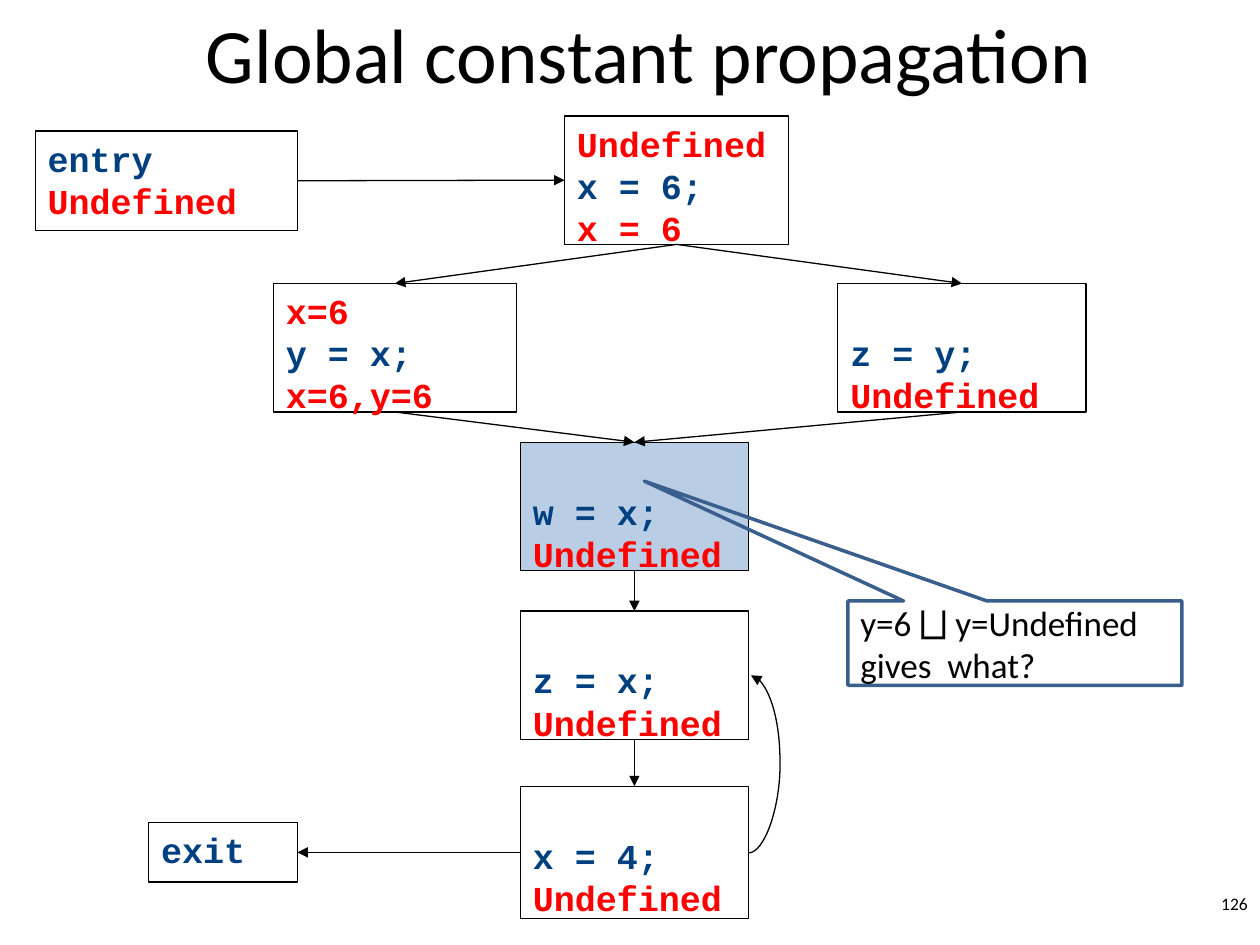
from lxml import etree
from pptx import Presentation
from pptx.dml.color import RGBColor
from pptx.enum.shapes import MSO_CONNECTOR, MSO_SHAPE
from pptx.enum.text import MSO_ANCHOR, PP_ALIGN
from pptx.oxml.ns import qn
from pptx.util import Inches, Pt

BLACK = RGBColor(0x00, 0x00, 0x00)
CODE_BLUE = RGBColor(0x00, 0x40, 0x80)
STATE_RED = RGBColor(0xFF, 0x00, 0x00)
CURRENT_FILL = RGBColor(0xB9, 0xCD, 0xE5)
CALLOUT_LINE = RGBColor(0x3A, 0x5F, 0x8C)
TOP, LEFT, BOTTOM, RIGHT = range(4)


def format_font(paragraph, name, size, color, bold=False):
    for run in paragraph.runs:
        run.font.name = name
        run.font.size = Pt(size)
        run.font.color.rgb = color
        run.font.bold = bold


def add_arrow(kind, x1, y1, x2, y2):
    arrow = slide.shapes.add_connector(kind, Inches(x1), Inches(y1), Inches(x2), Inches(y2))
    arrow.line.color.rgb = BLACK
    arrow.line.width = Pt(0.75)
    line = arrow.line._get_or_add_ln()
    etree.SubElement(line, qn("a:tailEnd"), type="triangle", w="med", len="med")
    etree.SubElement(arrow._element.spPr, qn("a:effectLst"))
    return arrow


presentation = Presentation()
presentation.slide_width = Inches(10)
presentation.slide_height = Inches(7.5)
slide = presentation.slides.add_slide(presentation.slide_layouts[5])

title = slide.shapes.title
title.left, title.top, title.width, title.height = (
    Inches(0.9), Inches(-0.21), Inches(8.5), Inches(1.25))
title.text_frame.text = "Global constant propagation"
title.text_frame.vertical_anchor = MSO_ANCHOR.MIDDLE
title.text_frame.paragraphs[0].alignment = PP_ALIGN.CENTER
format_font(title.text_frame.paragraphs[0], "Calibri", 44, BLACK)

number = slide.shapes.add_textbox(Inches(7.92), Inches(7.04), Inches(2.08), Inches(0.3))
number.text_frame.word_wrap = True
number.text_frame.text = "126"
number.text_frame.paragraphs[0].alignment = PP_ALIGN.RIGHT
format_font(number.text_frame.paragraphs[0], "Calibri", 10, BLACK)

# name: left, top, width, height, state before, code, state after
blocks = {
    "exit": (1.18, 6.53, 1.18, 0.47, None, "exit", None),
    "x = 4": (4.13, 6.24, 1.81, 1.05, "", "x = 4;", "Undefined"),
    "z = x": (4.13, 4.85, 1.81, 1.02, "", "z = x;", "Undefined"),
    "w = x": (4.13, 3.51, 1.81, 1.02, "", "w = x;", "Undefined"),
    "y = x": (2.17, 2.25, 1.93, 1.02, "x=6", "y = x;", "x=6,y=6"),
    "z = y": (6.65, 2.25, 1.97, 1.02, "", "z = y;", "Undefined"),
    "x = 6": (4.48, 0.92, 1.78, 1.02, "Undefined", "x = 6;", "x = 6"),
    "entry": (0.28, 1.04, 2.08, 0.79, None, "entry", "Undefined"),
}
boxes = {}
for name, (left, top, width, height, before, code, after) in blocks.items():
    box = slide.shapes.add_shape(
        MSO_SHAPE.RECTANGLE, Inches(left), Inches(top), Inches(width), Inches(height))
    box.shadow.inherit = False
    box.fill.background()
    box.line.color.rgb = BLACK
    box.line.width = Pt(0.75)
    text_frame = box.text_frame
    text_frame.word_wrap = True
    text_frame.vertical_anchor = MSO_ANCHOR.TOP
    text_frame.margin_top = Inches(0.38 if before == "" else 0.05)
    text_frame.margin_bottom = 0
    lines = [(text, color) for text, color in
             ((before, STATE_RED), (code, CODE_BLUE), (after, STATE_RED)) if text]
    text_frame.text = "\n".join(text for text, color in lines)
    for paragraph, (text, color) in zip(text_frame.paragraphs, lines):
        paragraph.alignment = PP_ALIGN.LEFT
        paragraph.line_spacing = Pt(24)
        format_font(paragraph, "Courier New", 20, color, bold=True)
    boxes[name] = box

boxes["w = x"].fill.solid()
boxes["w = x"].fill.fore_color.rgb = CURRENT_FILL

flow = [
    ("entry", RIGHT, "x = 6", LEFT),
    ("x = 6", BOTTOM, "y = x", TOP),
    ("x = 6", BOTTOM, "z = y", TOP),
    ("y = x", BOTTOM, "w = x", TOP),
    ("z = y", BOTTOM, "w = x", TOP),
    ("w = x", BOTTOM, "z = x", TOP),
    ("z = x", BOTTOM, "x = 4", TOP),
    ("x = 4", LEFT, "exit", RIGHT),
]
for source, source_side, target, target_side in flow:
    arrow = add_arrow(MSO_CONNECTOR.STRAIGHT, 0, 0, 1, 1)
    arrow.begin_connect(boxes[source], source_side)
    arrow.end_connect(boxes[target], target_side)

loop_arrow = add_arrow(MSO_CONNECTOR.CURVE, 5.94, 6.77, 5.96, 5.36)
adjustments = loop_arrow._element.spPr.find(qn("a:prstGeom")).get_or_add_avLst()
etree.SubElement(adjustments, qn("a:gd"), name="adj1", fmla="val 1250000")

callout = slide.shapes.add_shape(
    MSO_SHAPE.RECTANGULAR_CALLOUT, Inches(6.73), Inches(4.77), Inches(2.65), Inches(0.67))
callout.adjustments[0] = -1.11
callout.adjustments[1] = -1.92
callout.shadow.inherit = False
callout.fill.background()
callout.line.color.rgb = CALLOUT_LINE
callout.line.width = Pt(2)
callout.text_frame.word_wrap = True
callout.text_frame.vertical_anchor = MSO_ANCHOR.MIDDLE
callout.text_frame.text = "y=6 ⨆ y=Undefined gives  what?"
callout.text_frame.paragraphs[0].alignment = PP_ALIGN.LEFT
format_font(callout.text_frame.paragraphs[0], "Calibri", 20, BLACK)

presentation.save("out.pptx")
